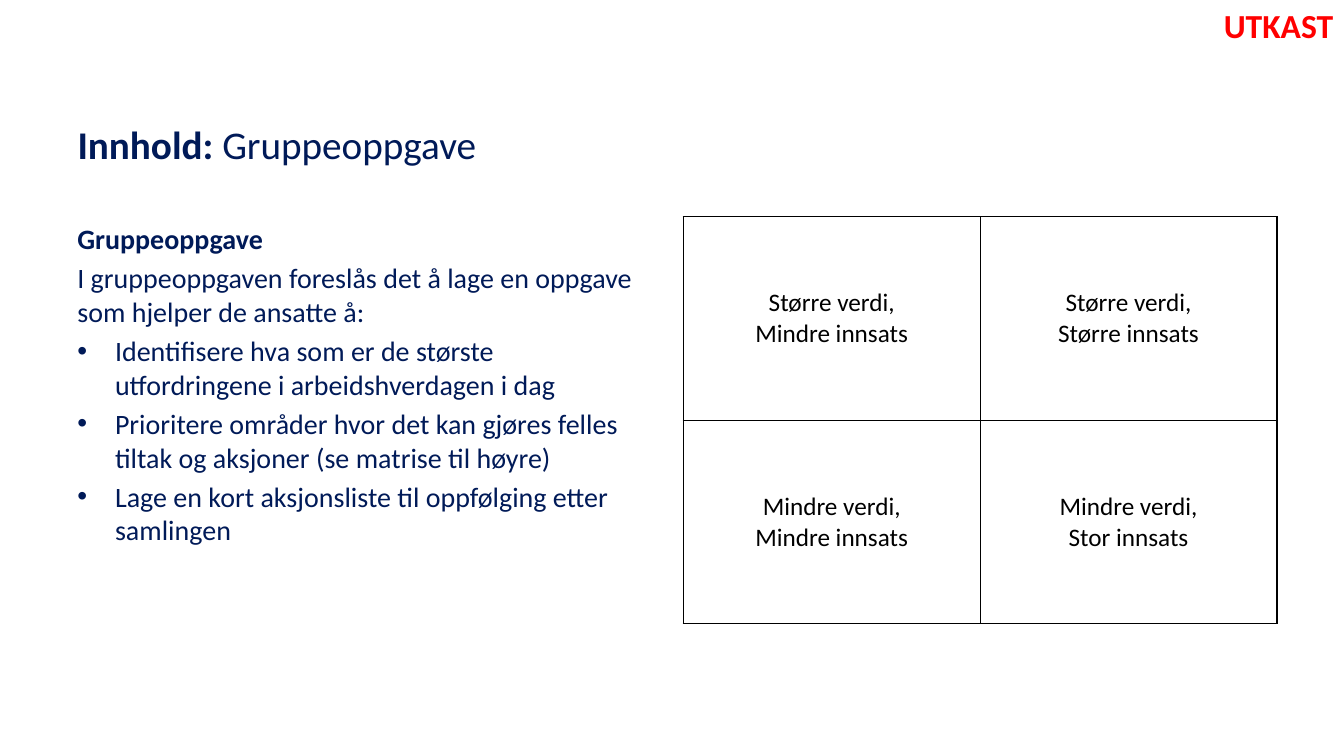
from lxml.etree import SubElement
from pptx import Presentation
from pptx.dml.color import RGBColor
from pptx.enum.text import MSO_ANCHOR, MSO_AUTO_SIZE, PP_ALIGN
from pptx.oxml.ns import qn
from pptx.util import Cm, Pt

COLORS = {"navy": "001A58", "red": "FF0000", "black": "000000"}
LEFT, COLUMN_WIDTH = 1.7, 14.96
TABLE_LEFT = 17.22
CONTENT_TOP, CONTENT_HEIGHT = 5.46, 10.26
BULLET_INDENT = Cm(0.95)


def format_font(font, size, color, bold=False):
    font.name = "Calibri"
    font.size = Pt(size)
    font.bold = bold
    font.color.rgb = RGBColor.from_string(COLORS[color])


presentation = Presentation()
presentation.slide_width = Cm(33.87)
presentation.slide_height = Cm(19.05)
slide = presentation.slides.add_slide(presentation.slide_layouts[5])

# Title
title = slide.shapes.title
title.left, title.top = Cm(LEFT), Cm(2.03)
title.width, title.height = Cm(30.48), Cm(3.18)
title.text_frame.auto_size = MSO_AUTO_SIZE.NONE
title.text_frame.vertical_anchor = MSO_ANCHOR.MIDDLE
paragraph = title.text_frame.paragraphs[0]
paragraph.alignment = PP_ALIGN.LEFT
for text, bold in [("Innhold:", True), (" Gruppeoppgave", False)]:
    run = paragraph.add_run()
    run.text = text
    format_font(run.font, 28, "navy", bold)

# Task description: heading, introduction and bullets
description = [
    "Gruppeoppgave",
    "I gruppeoppgaven foreslås det å lage en oppgave som hjelper de ansatte å:",
    "Identifisere hva som er de største utfordringene i arbeidshverdagen i dag",
    "Prioritere områder hvor det kan gjøres felles tiltak og aksjoner (se matrise til høyre)",
    "Lage en kort aksjonsliste til oppfølging etter samlingen",
]
task_box = slide.shapes.add_textbox(
    Cm(LEFT), Cm(CONTENT_TOP), Cm(COLUMN_WIDTH), Cm(CONTENT_HEIGHT))
task_box.text_frame.word_wrap = True
task_box.text_frame.text = "\n".join(description)
for index, paragraph in enumerate(task_box.text_frame.paragraphs):
    if index > 0:
        paragraph.space_before = Pt(4)
    if index > 1:
        properties = paragraph._p.get_or_add_pPr()
        properties.set("marL", str(BULLET_INDENT))
        properties.set("indent", str(-BULLET_INDENT))
        SubElement(properties, qn("a:buFont"), typeface="Arial")
        SubElement(properties, qn("a:buChar"), char="•")
    format_font(paragraph.runs[0].font, 20, "navy", bold=index == 0)

# Value and effort matrix
matrix = [
    ["Større verdi,\nMindre innsats", "Større verdi,\nStørre innsats"],
    ["Mindre verdi,\nMindre innsats", "Mindre verdi,\nStor innsats"],
]
table = slide.shapes.add_table(
    2, 2, Cm(TABLE_LEFT), Cm(CONTENT_TOP), Cm(COLUMN_WIDTH), Cm(CONTENT_HEIGHT)).table
table.first_row = False
table.horz_banding = False
for row_index, row in enumerate(matrix):
    for column_index, text in enumerate(row):
        cell = table.cell(row_index, column_index)
        cell.vertical_anchor = MSO_ANCHOR.MIDDLE
        cell.text_frame.text = text
        for paragraph in cell.text_frame.paragraphs:
            paragraph.alignment = PP_ALIGN.CENTER
            format_font(paragraph.runs[0].font, 18, "black")
        # Borders come before the fill in the cell properties
        properties = cell._tc.get_or_add_tcPr()
        for side in ("a:lnL", "a:lnR", "a:lnT", "a:lnB"):
            border = SubElement(properties, qn(side), w=str(Pt(1)))
            fill = SubElement(border, qn("a:solidFill"))
            SubElement(fill, qn("a:srgbClr"), val=COLORS["black"])
        cell.fill.background()

# Draft label
draft_label = slide.shapes.add_textbox(Cm(30.57), Cm(0), Cm(3.3), Cm(1.27))
draft_label.text_frame.word_wrap = False
draft_label.text_frame.auto_size = MSO_AUTO_SIZE.SHAPE_TO_FIT_TEXT
draft_label.text_frame.text = "UTKAST"
paragraph = draft_label.text_frame.paragraphs[0]
paragraph.alignment = PP_ALIGN.CENTER
format_font(paragraph.runs[0].font, 24, "red", bold=True)

presentation.save("out.pptx")
